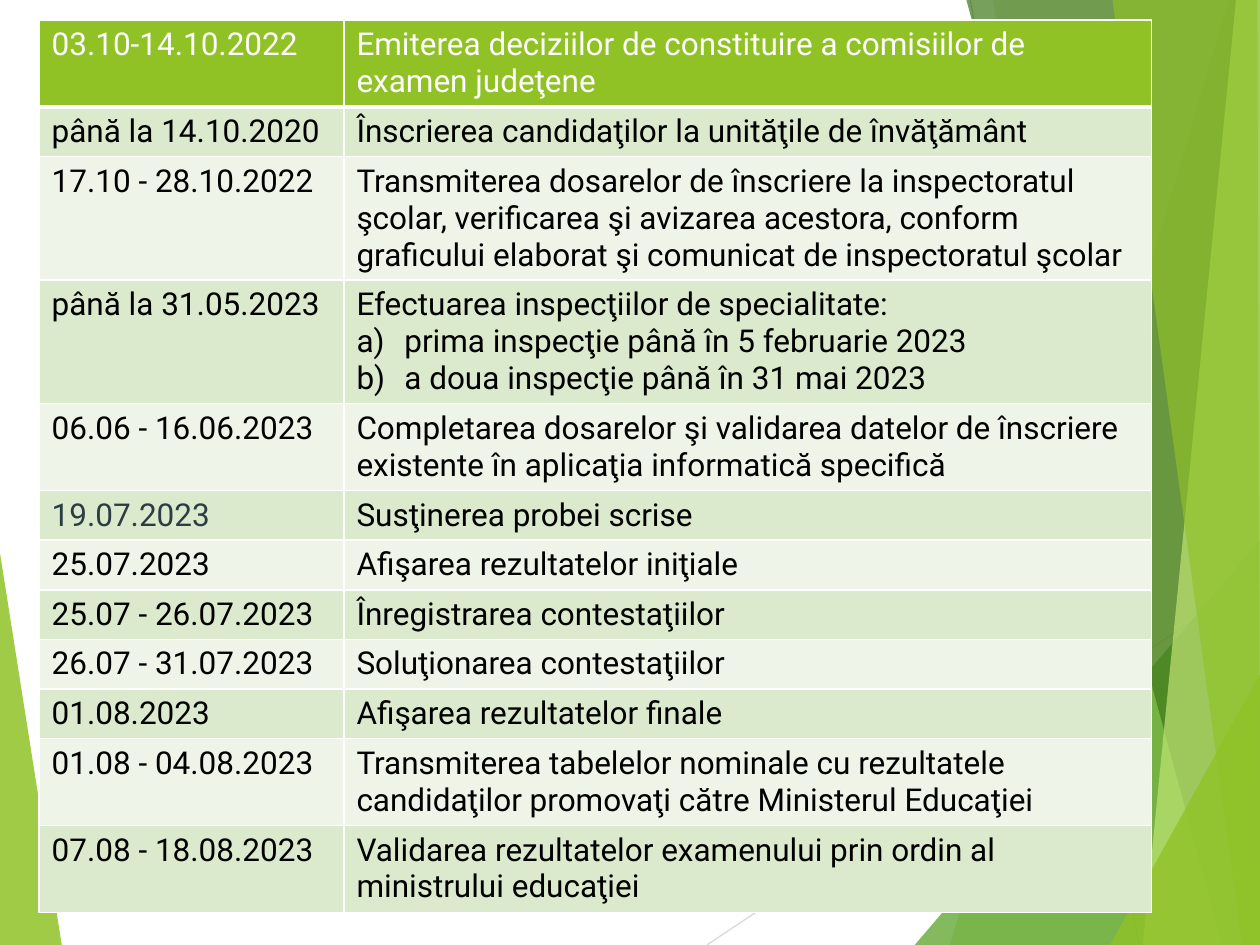
from dataclasses import dataclass

from lxml.etree import SubElement
from pptx import Presentation
from pptx.dml.color import RGBColor
from pptx.enum.shapes import MSO_CONNECTOR as Connector
from pptx.oxml.ns import qn
from pptx.util import Inches, Pt

COLORS = {
    "green": "90C226", "mid": "54A021", "dark": "3F7819", "lime": "C0E474",
    "band": "DBE9CD", "pale": "EEF4E8", "white": "FFFFFF", "black": "000000",
    "slate": "2C3C43", "gray": "BFBFBF", "light_gray": "D9D9D9",
}
FONT = "Roboto"


@dataclass
class Facet:
    color: str
    opacity: int
    points: list[tuple[float, float]]


@dataclass
class Ray:
    color: str
    start: tuple[float, float]
    end: tuple[float, float]


@dataclass
class Stage:
    date: str
    action: str
    height: float = 0.39
    steps: tuple[str, ...] = ()
    date_color: str = "black"


# Background, from back to front
BACKDROP = [
    Facet("green", 85, [(0, 4.39), (0.49, 7.5), (0, 7.5)]),
    Ray("light_gray", (5.61, 7.5), (10, 4.57)),
    Ray("gray", (7.7, 0), (9.04, 7.5)),
    Facet("green", 30, [(9.75, 0), (7.54, 7.5), (10, 7.5), (10, 0)]),
    Facet("green", 20, [(7.88, 0), (9.19, 7.5), (10, 7.5), (10, 0)]),
    Facet("mid", 72, [(7.26, 7.5), (10, 4.29), (10, 7.5)]),
    Facet("dark", 70, [(7.67, 0), (9.7, 7.5), (10, 7.5), (10, 0)]),
    Facet("lime", 70, [(9.81, 0), (9.07, 7.5), (10, 7.5), (10, 0)]),
    Facet("green", 65, [(8.83, 0), (9.86, 7.5), (10, 7.5), (9.98, 0)]),
    Facet("green", 80, [(8.81, 7.5), (10, 5.35), (10, 7.5)]),
]

STAGES = [
    Stage("03.10-14.10.2022",
          "Emiterea deciziilor de constituire a comisiilor de examen judeţene",
          0.69, date_color="white"),
    Stage("până la 14.10.2020", "Înscrierea candidaţilor la unităţile de învăţământ"),
    Stage("17.10 - 28.10.2022",
          "Transmiterea dosarelor de înscriere la inspectoratul şcolar, verificarea "
          "şi avizarea acestora, conform graficului elaborat şi comunicat de "
          "inspectoratul şcolar", 0.98),
    Stage("până la 31.05.2023", "Efectuarea inspecţiilor de specialitate:", 0.98,
          ("prima inspecţie până în 5 februarie 2023",
           "a doua inspecţie până în 31 mai 2023")),
    Stage("06.06 - 16.06.2023",
          "Completarea dosarelor şi validarea datelor de înscriere existente în "
          "aplicaţia informatică specifică", 0.69),
    Stage("19.07.2023", "Susţinerea probei scrise", date_color="slate"),
    Stage("25.07.2023", "Afişarea rezultatelor iniţiale"),
    Stage("25.07 - 26.07.2023", "Înregistrarea contestaţiilor"),
    Stage("26.07 - 31.07.2023", "Soluţionarea contestaţiilor"),
    Stage("01.08.2023", "Afişarea rezultatelor finale"),
    Stage("01.08 - 04.08.2023",
          "Transmiterea tabelelor nominale cu rezultatele candidaţilor promovaţi "
          "către Ministerul Educaţiei", 0.69),
    Stage("07.08 - 18.08.2023",
          "Validarea rezultatelor examenului prin ordin al ministrului educaţiei", 0.69),
]


def rgb(name: str) -> RGBColor:
    return RGBColor.from_string(COLORS[name])


def draw_facet(slide, facet: Facet) -> None:
    corners = [(Inches(x), Inches(y)) for x, y in facet.points]
    builder = slide.shapes.build_freeform(*corners[0])
    builder.add_line_segments(corners[1:], close=True)
    shape = builder.convert_to_shape()
    shape.shadow.inherit = False
    shape.line.fill.background()
    shape.fill.solid()
    shape.fill.fore_color.rgb = rgb(facet.color)
    color = shape.fill._xPr.find(".//" + qn("a:srgbClr"))
    SubElement(color, qn("a:alpha"), val=str(facet.opacity * 1000))


def draw_ray(slide, ray: Ray) -> None:
    ends = [Inches(v) for v in (*ray.start, *ray.end)]
    line = slide.shapes.add_connector(Connector.STRAIGHT, *ends)
    line.line.color.rgb = rgb(ray.color)
    line.line.width = Pt(0.75)
    SubElement(line._element.spPr, qn("a:effectLst"))


def write(paragraph, text: str, *, color: str = "black", size: float = 18,
          lettered: bool = False) -> None:
    run = paragraph.add_run()
    run.text = text
    run.font.name = FONT
    run.font.size = Pt(size)
    run.font.bold = False
    run.font.color.rgb = rgb(color)
    if lettered:
        props = paragraph._p.get_or_add_pPr()
        props.set("marL", str(Inches(0.38)))
        props.set("indent", str(-Inches(0.38)))
        SubElement(props, qn("a:buFont"), typeface="+mj-lt")
        SubElement(props, qn("a:buAutoNum"), type="alphaLcParenR")


def style_cell(cell, fill: str, bottom: float) -> None:
    props = cell._tc.get_or_add_tcPr()
    for side, width in (("L", 1), ("R", 1), ("T", 1), ("B", bottom)):
        border = SubElement(props, qn(f"a:ln{side}"), w=str(Pt(width)))
        paint = SubElement(border, qn("a:solidFill"))
        SubElement(paint, qn("a:srgbClr"), val=COLORS["white"])
    cell.fill.solid()
    cell.fill.fore_color.rgb = rgb(fill)


def draw_calendar(slide, stages: list[Stage]) -> None:
    total = sum(stage.height for stage in stages)
    calendar = slide.shapes.add_table(
        len(stages), 2, Inches(0.31), Inches(0.16), Inches(8.83), Inches(total)).table
    for column, width in zip(calendar.columns, (2.42, 6.41)):
        column.width = Inches(width)
    for i, stage in enumerate(stages):
        calendar.rows[i].height = Inches(stage.height)
        fill = "green" if i == 0 else ("pale", "band")[i % 2]
        date, action = calendar.cell(i, 0), calendar.cell(i, 1)
        for cell in (date, action):
            style_cell(cell, fill, bottom=3 if i == 0 else 1)
        write(date.text_frame.paragraphs[0], stage.date, color=stage.date_color)
        write(action.text_frame.paragraphs[0], stage.action,
              color="white" if i == 0 else "black")
        for step in stage.steps:
            write(action.text_frame.add_paragraph(), step, lettered=True)


def main() -> None:
    deck = Presentation()
    deck.slide_width, deck.slide_height = Inches(10), Inches(7.5)
    slide = deck.slides.add_slide(deck.slide_layouts[6])
    for part in BACKDROP:
        if isinstance(part, Facet):
            draw_facet(slide, part)
        else:
            draw_ray(slide, part)
    draw_calendar(slide, STAGES)
    deck.save("out.pptx")


if __name__ == "__main__":
    main()
